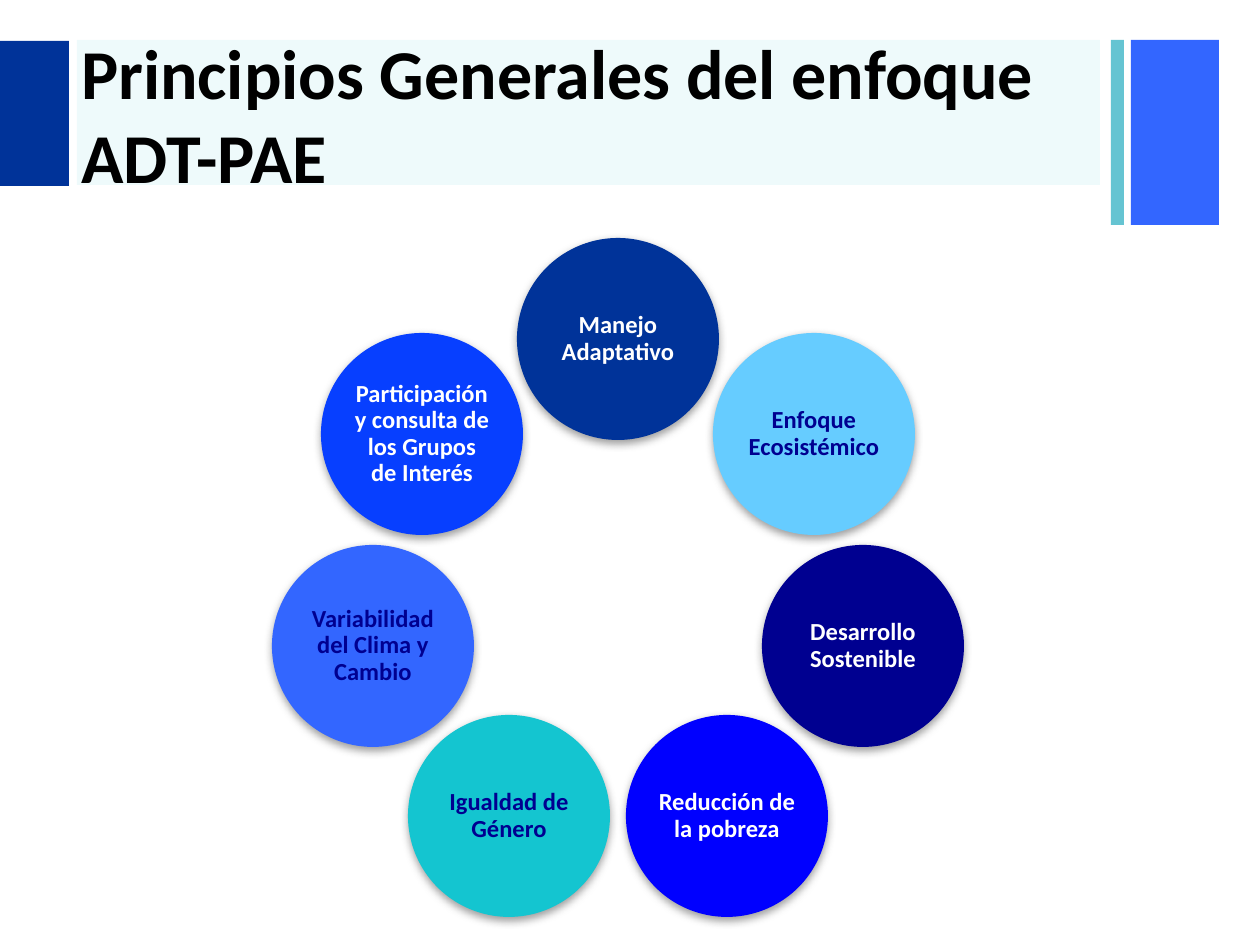
"""Build the slide on the general principles of the ADT-PAE approach."""
import math

import lxml.etree
import pptx
import pptx.dml.color
import pptx.enum.shapes
import pptx.enum.text
import pptx.oxml.ns
import pptx.util

PX = 914400 // 126
SHAPE = pptx.enum.shapes.MSO_SHAPE
ALIGN = pptx.enum.text.PP_ALIGN
qn = pptx.oxml.ns.qn

TITLE = "Principios Generales del enfoque ADT-PAE"
TITLE_BOX = (68, 43, 1042, 141)
BANDS = [
    ((1131, 40, 88, 185), "3366FF", 100),
    ((1111, 40, 13, 185), "65C4D2", 100),
    ((77, 40, 1023, 145), "14C5D0", 7),
    ((0, 41, 69, 145), "003399", 100),
]
PRINCIPLES = [
    ("Manejo Adaptativo", "003399", "FFFFFF"),
    ("Enfoque Ecosistémico", "66CCFF", "000090"),
    ("Desarrollo Sostenible", "000090", "FFFFFF"),
    ("Reducción de la pobreza", "0000FF", "FFFFFF"),
    ("Igualdad de Género", "14C5D0", "000090"),
    ("Variabilidad del Clima y Cambio", "3366FF", "000090"),
    ("Participación y consulta de los Grupos de Interés", "073FFF", "FFFFFF"),
]
RING_X, RING_Y, RING_RADIUS, DIAMETER = 618, 590, 251, 202


def rgb(color):
    return pptx.dml.color.RGBColor.from_string(color)


def emu(box):
    return [round(length) * PX for length in box]


def add_alpha(color_element, percent):
    lxml.etree.SubElement(color_element, qn("a:alpha"), val=str(percent * 1000))


def add_filled(slide, kind, box, color, opacity=100):
    shape = slide.shapes.add_shape(kind, *emu(box))
    shape.shadow.inherit = False
    shape.fill.solid()
    shape.fill.fore_color.rgb = rgb(color)
    shape.line.fill.background()
    if opacity < 100:
        add_alpha(shape.fill._xPr.find(".//" + qn("a:srgbClr")), opacity)
    return shape


def add_soft_shadow(shape):
    effects = shape._element.spPr.find(qn("a:effectLst"))
    shadow = lxml.etree.SubElement(
        effects, qn("a:outerShdw"), blurRad=str(pptx.util.Pt(5)),
        dist=str(pptx.util.Pt(2)), dir="5400000", rotWithShape="0")
    add_alpha(lxml.etree.SubElement(shadow, qn("a:srgbClr"), val="808080"), 75)


def write(shape, text, *, size, color, align, inset_x, inset_y, spacing=1.0):
    frame = shape.text_frame
    frame.word_wrap = True
    frame.vertical_anchor = pptx.enum.text.MSO_ANCHOR.MIDDLE
    frame.margin_left = frame.margin_right = inset_x * PX
    frame.margin_top = frame.margin_bottom = inset_y * PX
    paragraph = frame.paragraphs[0]
    paragraph.alignment = align
    paragraph.line_spacing = spacing
    run = paragraph.add_run()
    run.text = text
    run.font.name = "Calibri"
    run.font.size = pptx.util.Pt(size)
    run.font.bold = True
    run.font.color.rgb = rgb(color)


def main():
    deck = pptx.Presentation()
    deck.slide_width, deck.slide_height = 1260 * PX, 945 * PX
    slide = deck.slides.add_slide(deck.slide_layouts[6])

    for box, color, opacity in BANDS:
        add_filled(slide, SHAPE.RECTANGLE, box, color, opacity)
    heading = slide.shapes.add_textbox(*emu(TITLE_BOX))
    write(heading, TITLE, size=40, color="000000", align=ALIGN.LEFT,
          inset_x=13, inset_y=6)

    for index, (principle, fill, ink) in enumerate(PRINCIPLES):
        angle = 2 * math.pi * index / len(PRINCIPLES)
        left = RING_X + RING_RADIUS * math.sin(angle) - DIAMETER / 2
        top = RING_Y - RING_RADIUS * math.cos(angle) - DIAMETER / 2
        circle = add_filled(slide, SHAPE.OVAL, (left, top, DIAMETER, DIAMETER), fill)
        add_soft_shadow(circle)
        write(circle, principle, size=14, color=ink, align=ALIGN.CENTER,
              inset_x=2, inset_y=2, spacing=0.9)

    deck.save("out.pptx")


if __name__ == "__main__":
    main()
